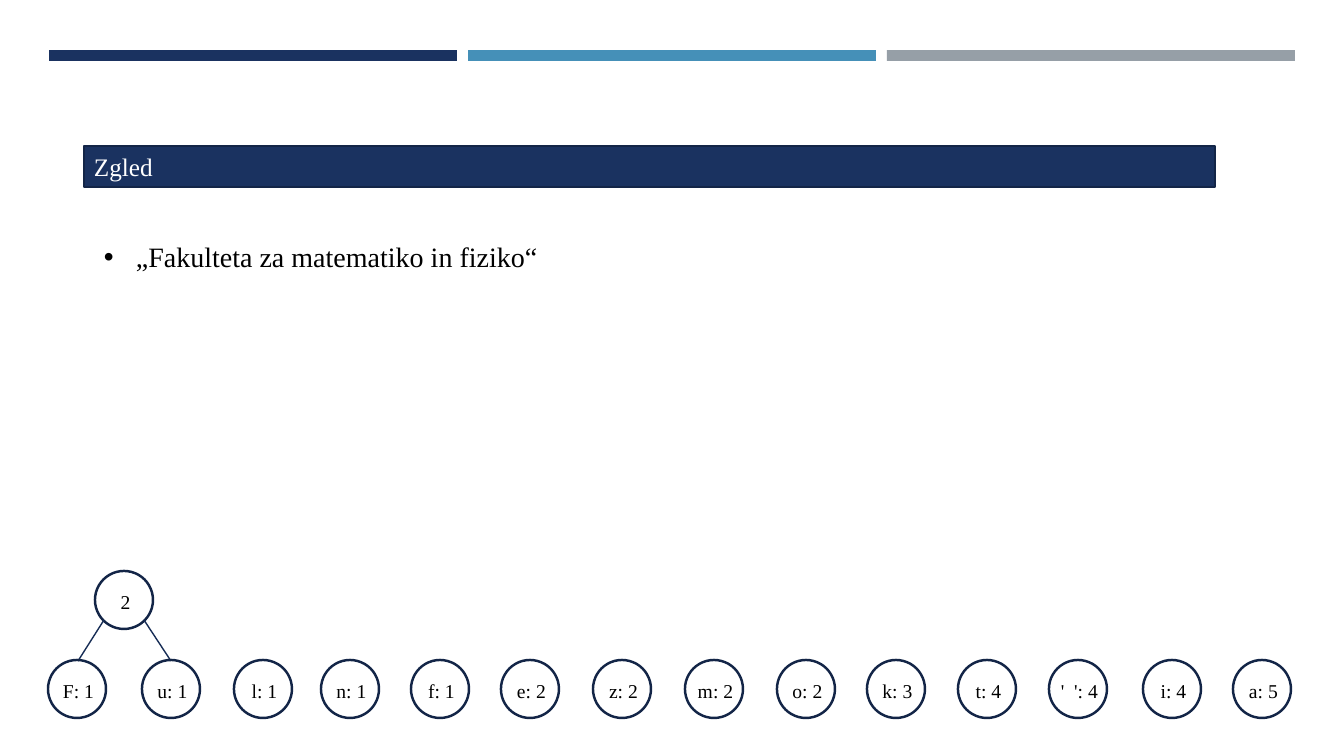
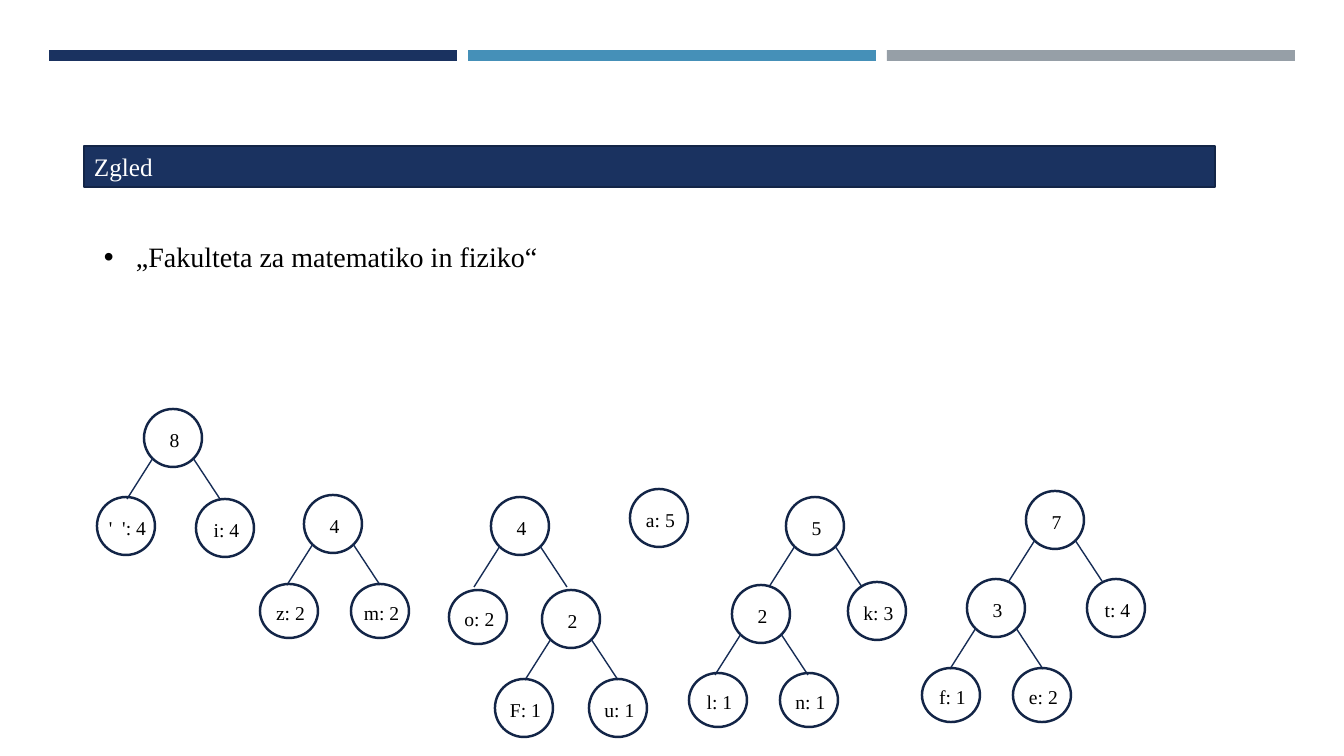
from collections import namedtuple

from lxml.etree import SubElement
from pptx import Presentation
from pptx.dml.color import RGBColor
from pptx.enum.shapes import MSO_CONNECTOR, MSO_SHAPE
from pptx.enum.text import MSO_ANCHOR, PP_ALIGN
from pptx.oxml.ns import qn
from pptx.util import Inches, Pt

SCALE = Inches(7.5) / 756
NAVY = RGBColor(0x1A, 0x32, 0x60)
BLUE = RGBColor(0x45, 0x90, 0xB8)
GREY = RGBColor(0x96, 0x9F, 0xA7)
EDGE = RGBColor(0x13, 0x25, 0x47)
LINK = RGBColor(0x17, 0x2D, 0x56)
WHITE = RGBColor(0xFF, 0xFF, 0xFF)
BLACK = RGBColor(0, 0, 0)
FACE = "Times New Roman"
SIZE = 58
LOW = 54

Node = namedtuple("Node", "label dx dy high kids", defaults=(SIZE, ()))

PAIR = (Node("F: 1", -47, 89), Node("u: 1", 47, 89))

LEAVES = {
    "l: 1": 234, "n: 1": 321, "f: 1": 411, "e: 2": 501,
    "z: 2": 593, "m: 2": 685, "o: 2": 777, "k: 3": 867,
    "t: 4": 958, "'  ': 4": 1049, "i: 4": 1143, "a: 5": 1233,
}

FIRST = [Node("2", 95, 571, kids=PAIR)]
FIRST += [Node(label, left, 660) for label, left in LEAVES.items()]

LAST = [
    Node("8", 144, 409, kids=(Node("'  ': 4", -47, 88), Node("i: 4", 52, 90))),
    Node("4", 304, 495, kids=(
        Node("z: 2", -44, 89, LOW), Node("m: 2", 47, 89, LOW))),
    Node("4", 491, 497, kids=(
        Node("o: 2", -42, 93, LOW), Node("2", 51, 93, kids=PAIR))),
    Node("a: 5", 630, 489),
    Node("5", 786, 497, kids=(
        Node("2", -54, 88, kids=(
            Node("l: 1", -43, 88, LOW), Node("n: 1", 48, 88, LOW))),
        Node("k: 3", 62, 85))),
    Node("7", 1026, 491, kids=(
        Node("3", -59, 88, kids=(
            Node("f: 1", -45, 89, LOW), Node("e: 2", 46, 89, LOW))),
        Node("t: 4", 61, 88))),
]


def px(*marks):
    return [round(mark * SCALE) for mark in marks]


def apply(item, style):
    for name, value in style.items():
        setattr(item, name, value)


def write(shape, text, size, color, align, frame):
    apply(shape.text_frame, frame)
    para = shape.text_frame.paragraphs[0]
    para.alignment = align
    run = para.add_run()
    run.text = text
    apply(run.font, {"name": FACE, "size": Pt(size)})
    run.font.color.rgb = color
    return para


def draw(slide, kind, box, fill=None, edge=None):
    shape = slide.shapes.add_shape(kind, *px(*box))
    shape.shadow.inherit = False
    if fill is None:
        shape.fill.background()
    else:
        shape.fill.solid()
        shape.fill.fore_color.rgb = fill
    if edge is None:
        shape.line.fill.background()
    else:
        shape.line.color.rgb = edge
        shape.line.width = Pt(1.75)
    return shape


def bands(slide, left, top, width, high):
    gap = 11
    wide = (width - 2 * gap) // 3
    for step, color in enumerate((NAVY, BLUE, GREY)):
        spot = left + step * (wide + gap)
        draw(slide, MSO_SHAPE.RECTANGLE, (spot, top, wide, high), color)


def title(slide, text, box):
    shape = draw(slide, MSO_SHAPE.RECTANGLE, box, NAVY, EDGE)
    write(shape, text, 18, WHITE, PP_ALIGN.LEFT,
          {"word_wrap": True, "vertical_anchor": MSO_ANCHOR.MIDDLE})


def bullet(slide, text, box):
    shape = slide.shapes.add_textbox(*px(*box))
    para = write(shape, text, 20, BLACK, PP_ALIGN.LEFT, {"word_wrap": True})
    props = para._p.get_or_add_pPr()
    dent, = px(32)
    props.set("marL", str(dent))
    props.set("indent", str(-dent))
    SubElement(props, qn("a:buFont")).set("typeface", "Arial")
    SubElement(props, qn("a:buChar")).set("char", "•")


def link(slide, *ends):
    line = slide.shapes.add_connector(MSO_CONNECTOR.STRAIGHT, *px(*ends))
    apply(line.line, {"width": Pt(1)})
    line.line.color.rgb = LINK
    SubElement(line._element.spPr, qn("a:effectLst"))


def tree(slide, node, left=0, top=0):
    left, top = left + node.dx, top + node.dy
    ring = draw(slide, MSO_SHAPE.OVAL, (left, top, SIZE, node.high), edge=EDGE)
    inset, = px(3)
    write(ring, node.label, 14, BLACK, PP_ALIGN.CENTER,
          {"word_wrap": False, "vertical_anchor": MSO_ANCHOR.MIDDLE,
           "margin_left": inset, "margin_right": 0,
           "margin_top": inset, "margin_bottom": 0})
    for kid, foot, head in zip(node.kids, (-17, 76), (9, 49)):
        link(slide, left + foot, top + 90, left + head, top + 49)
        tree(slide, kid, left, top)


def page(deck, nodes):
    slide = deck.slides.add_slide(deck.slide_layouts[6])
    bands(slide, 49, 50, 1246, 11)
    title(slide, "Zgled", (84, 146, 1131, 41))
    bullet(slide, "„Fakulteta za matematiko in fiziko“", (94, 235, 509, 41))
    for node in nodes:
        tree(slide, node)


def main():
    deck = Presentation()
    deck.slide_width, deck.slide_height = px(1344, 756)
    for nodes in (FIRST, LAST):
        page(deck, nodes)
    deck.save("out.pptx")


if __name__ == "__main__":
    main()
